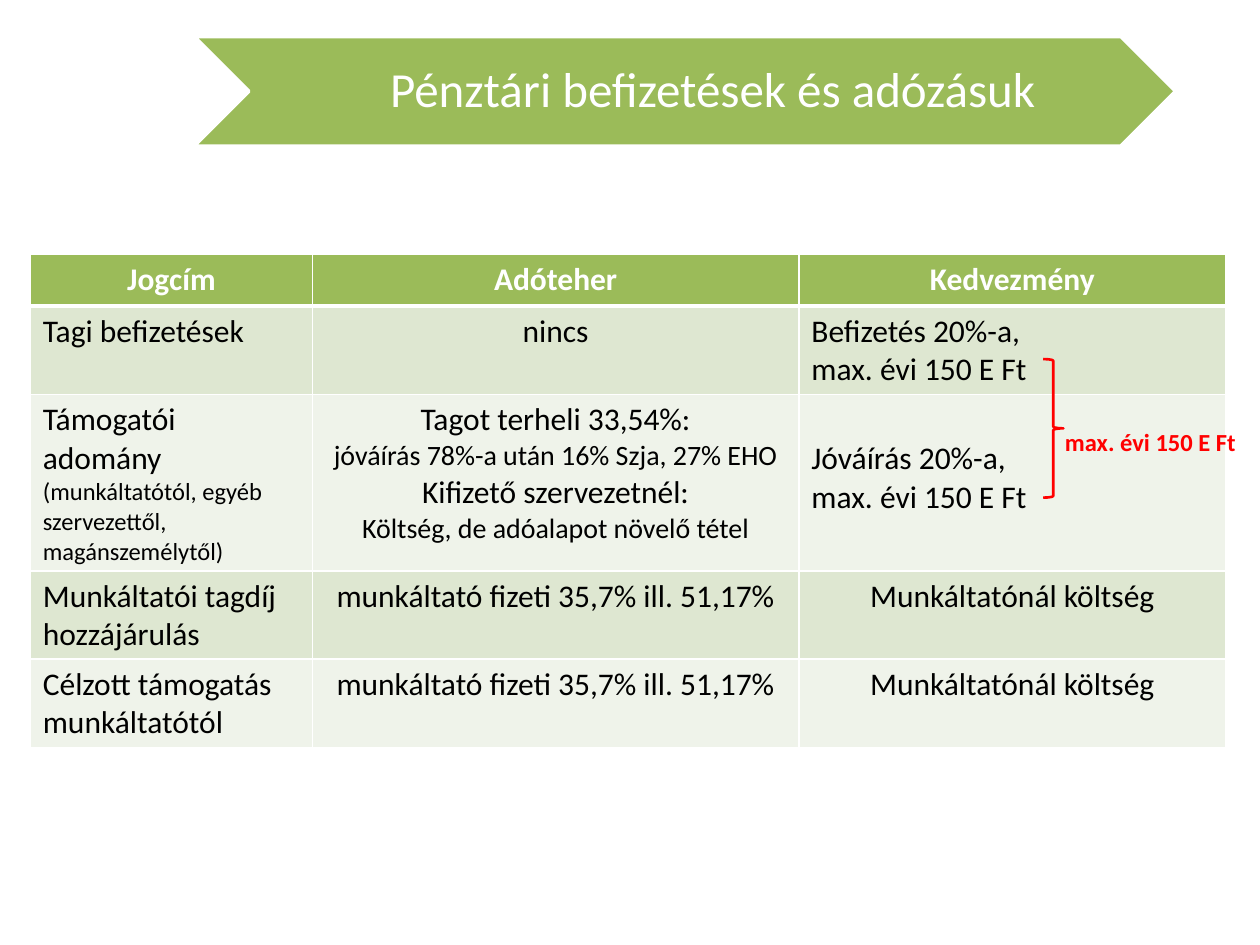
from dataclasses import dataclass
from typing import NamedTuple

from lxml.etree import SubElement
from pptx import Presentation
from pptx.dml.color import RGBColor
from pptx.enum.shapes import MSO_SHAPE as Shape
from pptx.enum.text import MSO_ANCHOR as Anchor, PP_ALIGN as Align
from pptx.oxml.ns import qn
from pptx.util import Inches, Pt


@dataclass(frozen=True)
class Theme:
    font: str = "Calibri"
    green: str = "9BBB59"
    band_dark: str = "DEE7D1"
    band_light: str = "EFF3EA"
    white: str = "FFFFFF"
    black: str = "000000"
    red: str = "FF0000"
    title: int = 28
    body: int = 18
    detail: int = 16
    note: int = 14


class Span(NamedTuple):
    text: str
    size: int


class Cell(NamedTuple):
    paras: list[list[Span]]
    align: Align = Align.CENTER
    top: float = 0.05


class Place(NamedTuple):
    left: float
    top: float
    width: float
    height: float


THEME = Theme()


def lines(*texts: str, size: int = THEME.body) -> list[list[Span]]:
    """One single-span paragraph per text."""
    return [[Span(text, size)] for text in texts]


COLUMN_WIDTHS = [2.24, 3.86, 3.39]
ROW_HEIGHTS = [0.41, 0.7, 1.4, 0.7, 0.7]
EMPLOYER_PAYS = Cell(lines("munkáltató fizeti 35,7% ill. 51,17%"))
EMPLOYER_COST = Cell(lines("Munkáltatónál költség"))
ROWS = [
    [Cell(lines(name)) for name in ("Jogcím", "Adóteher", "Kedvezmény")],
    [
        Cell(lines("Tagi befizetések"), Align.LEFT),
        Cell(lines("nincs")),
        Cell(lines("Befizetés 20%-a,", "max. évi 150 E Ft"), Align.LEFT),
    ],
    [
        Cell([[Span("Támogatói adomány ", THEME.body),
               Span("(munkáltatótól, egyéb szervezettől, magánszemélytől)", THEME.note)]],
             Align.LEFT),
        Cell([
            [Span("Tagot terheli 33,54%:", THEME.body)],
            [Span("jóváírás 78%-a után 16% Szja, 27% EHO", THEME.detail)],
            [Span("Kifizető szervezetnél:", THEME.body)],
            [Span("Költség, de adóalapot növelő tétel", THEME.detail)],
        ]),
        Cell(lines("Jóváírás 20%-a,", "max. évi 150 E Ft"), Align.LEFT, top=0.36),
    ],
    [Cell(lines("Munkáltatói tagdíj hozzájárulás"), Align.LEFT), EMPLOYER_PAYS, EMPLOYER_COST],
    [Cell(lines("Célzott támogatás munkáltatótól"), Align.LEFT), EMPLOYER_PAYS, EMPLOYER_COST],
]


def color(value: str) -> RGBColor:
    return RGBColor.from_string(value)


def apply_format(target, values: dict) -> None:
    for name, value in values.items():
        setattr(target, name, value)


def write(frame, paras: list[list[Span]], align: Align, ink: str, bold: bool = False) -> None:
    for index, spans in enumerate(paras):
        para = frame.add_paragraph() if index else frame.paragraphs[0]
        para.alignment = align
        for span in spans:
            run = para.add_run()
            run.text = span.text
            apply_format(run.font, {"name": THEME.font, "size": Pt(span.size), "bold": bold})
            run.font.color.rgb = color(ink)


def add_outline(page, kind: Shape, place: Place, line: str, width: float, fill: str | None = None):
    shape = page.shapes.add_shape(kind, *map(Inches, place))
    shape.shadow.inherit = False
    if fill:
        shape.fill.solid()
        shape.fill.fore_color.rgb = color(fill)
    else:
        shape.fill.background()
    shape.line.color.rgb = color(line)
    shape.line.width = Pt(width)


def add_text(page, place: Place, span: Span, ink: str, margins: tuple, bold: bool = False,
             wrap: bool = True, anchor: Anchor = Anchor.TOP):
    frame = page.shapes.add_textbox(*map(Inches, place)).text_frame
    sides = ("margin_left", "margin_top", "margin_right", "margin_bottom")
    apply_format(frame, dict(zip(sides, map(Inches, margins))))
    apply_format(frame, {"word_wrap": wrap, "vertical_anchor": anchor})
    write(frame, [[span]], Align.CENTER, ink, bold)
    return frame


def add_borders(cell, bottom: float) -> None:
    properties = cell._tc.get_or_add_tcPr()
    for side, width in {"L": 1, "R": 1, "T": 1, "B": bottom}.items():
        border = SubElement(properties, qn(f"a:ln{side}"), w=str(Pt(width)))
        fill = SubElement(border, qn("a:solidFill"))
        SubElement(fill, qn("a:srgbClr"), val=THEME.white)


def add_tax_table(page, left: float, top: float) -> None:
    size = (sum(COLUMN_WIDTHS), sum(ROW_HEIGHTS))
    table = page.shapes.add_table(len(ROWS), len(COLUMN_WIDTHS),
                                  *map(Inches, (left, top, *size))).table
    for column, width in zip(table.columns, COLUMN_WIDTHS):
        column.width = Inches(width)
    for row_index, (row, height) in enumerate(zip(ROWS, ROW_HEIGHTS)):
        table.rows[row_index].height = Inches(height)
        header = row_index == 0
        band = THEME.band_dark if row_index % 2 else THEME.band_light
        for column_index, content in enumerate(row):
            cell = table.cell(row_index, column_index)
            cell.margin_top = Inches(content.top)
            add_borders(cell, bottom=3 if header else 1)
            cell.fill.solid()
            cell.fill.fore_color.rgb = color(THEME.green if header else band)
            write(cell.text_frame, content.paras, content.align,
                  THEME.white if header else THEME.black, bold=header)


def main() -> None:
    deck = Presentation()
    apply_format(deck, {"slide_width": Inches(10), "slide_height": Inches(7.5)})
    page = deck.slides.add_slide(deck.slide_layouts[6])

    add_outline(page, Shape.CHEVRON, Place(1.54, 0.29, 7.79, 0.87), THEME.white, 2, THEME.green)
    title = add_text(page, Place(1.97, 0.29, 6.92, 0.87),
                     Span("Pénztári befizetések és adózásuk", THEME.title), THEME.white,
                     margins=(0.49, 0.04, 0.04, 0.04), anchor=Anchor.MIDDLE)
    title.paragraphs[0].line_spacing = 0.9

    add_tax_table(page, 0.24, 2.02)

    add_outline(page, Shape.RIGHT_BRACE, Place(8.28, 2.85, 0.16, 1.1), THEME.red, 1.5)
    add_text(page, Place(8.42, 3.34, 1.42, 0.34), Span("max. évi 150 E Ft", THEME.note),
             THEME.red, margins=(0, 0.05, 0, 0.05), bold=True, wrap=False)

    deck.save("out.pptx")


if __name__ == "__main__":
    main()
